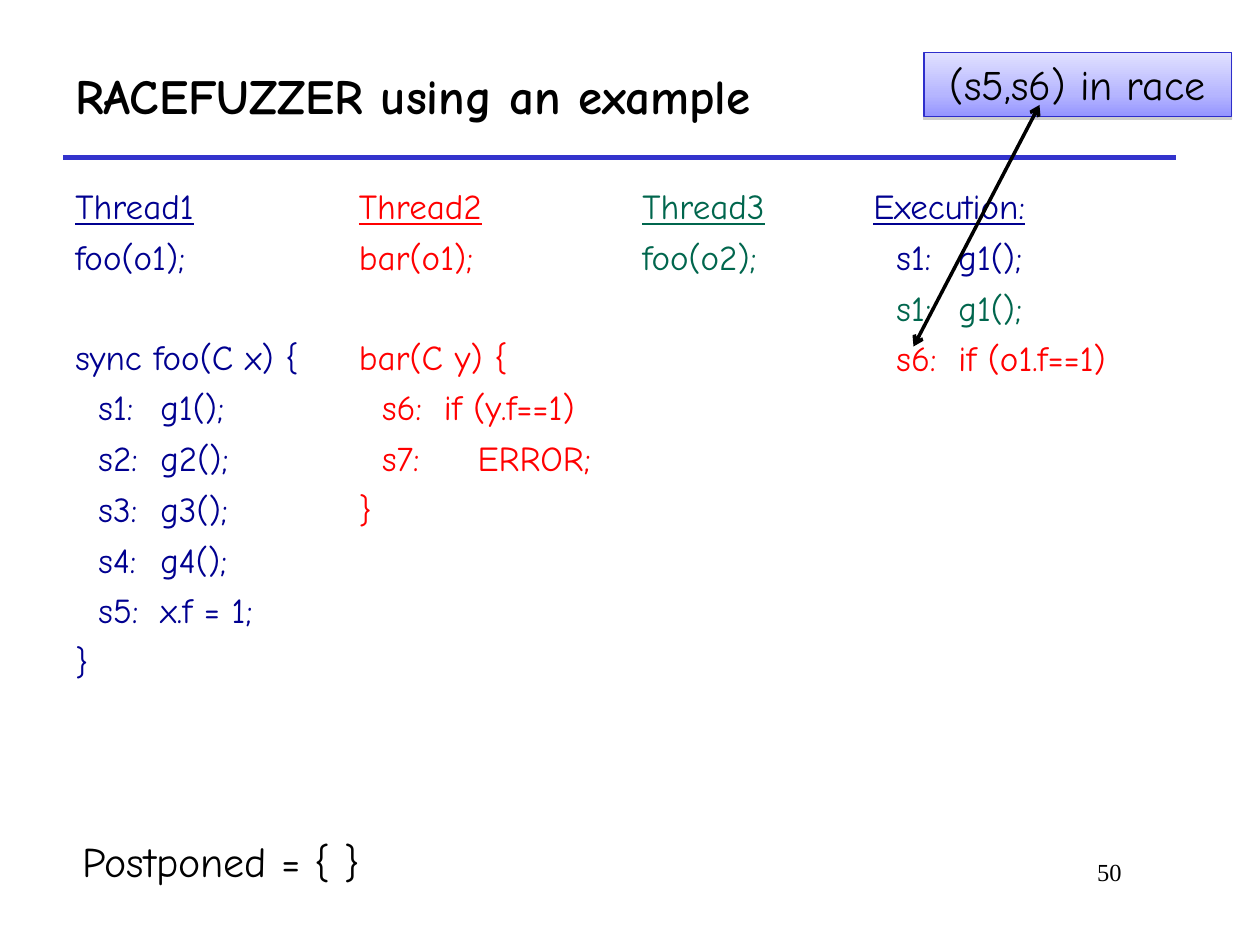
import copy
import pptx
import pptx.dml.color
import pptx.enum.shapes
import pptx.enum.text
import pptx.oxml.ns
import pptx.util
from lxml import etree

PX = 7620  # EMU per px, 120 px to the inch
HUES = {
    "black": "000000", "navy": "000090", "red": "FF0000", "green": "00664D",
    "rule": "3333CC", "edge": "2E2ECB", "shade": "808080",
    "pale": "E1E1FF", "mid": "B6B6FF", "deep": "9595FF",
}
SANS, SERIF = "Comic Neue", "Times New Roman"
ALIGN = pptx.enum.text.PP_ALIGN
ANCHOR = pptx.enum.text.MSO_ANCHOR
LABEL, CODE, NESTED = 22, 81, 113  # left edges inside a code column
GAP, LINE = 5, 28  # space before a line and line pitch, in points


def hue(name):
    return pptx.dml.color.RGBColor.from_string(HUES[name])


def emu(*sizes):
    return [pptx.util.Emu(size * PX) for size in sizes]


def add(parent, tag, **attrs):
    return etree.SubElement(parent, pptx.oxml.ns.qn(tag), attrs)


def style(para, size, color, face=SANS, bold=False, under=False):
    for run in para.runs:
        font = run.font
        font.size, font.name = pptx.util.Pt(size), face
        font.bold, font.underline = bold, under
        font.color.rgb = hue(color)


def label(slide, box, text, size, anchor=ANCHOR.TOP, align=ALIGN.LEFT, **look):
    shape = slide.shapes.add_textbox(*emu(*box))
    frame = shape.text_frame
    frame.word_wrap, frame.vertical_anchor = True, anchor
    frame.text = text
    frame.paragraphs[0].alignment = align
    style(frame.paragraphs[0], size, "black", **look)


def fit(shape, text):
    """Put one centred, unwrapped line in a shape that grows with it."""
    frame = shape.text_frame
    frame.word_wrap = False
    frame.auto_size = pptx.enum.text.MSO_AUTO_SIZE.SHAPE_TO_FIT_TEXT
    frame.vertical_anchor = ANCHOR.TOP
    frame.text = text
    para = frame.paragraphs[0]
    para.alignment, para.space_before = ALIGN.CENTER, pptx.util.Pt(GAP)
    style(para, 24, "black")


def line(slide, ends, color, width, arrows=False):
    link = slide.shapes.add_connector(
        pptx.enum.shapes.MSO_CONNECTOR.STRAIGHT, *emu(*ends))
    link.line.color.rgb = hue(color)
    link.line.width = pptx.util.Pt(width)
    if arrows:
        for tag in ("a:headEnd", "a:tailEnd"):
            add(link.line._get_or_add_ln(), tag, type="arrow")
    add(link._element.spPr, "a:effectLst")


def column(slide, box, head, color, rows):
    """Write a heading and code rows, each a (gap lines, text, colour)."""
    frame = slide.shapes.add_textbox(*emu(*box)).text_frame
    frame.word_wrap = True
    for num, (skip, text, tint) in enumerate([(0, head, color)] + rows):
        para = frame.add_paragraph() if num else frame.paragraphs[0]
        para.text = text
        para.space_before = pptx.util.Pt(GAP + skip * LINE)
        style(para, 20, tint, under=num == 0)
        if "\t" in text:
            left = NESTED if "ERROR" in text else CODE
            props = para._p.get_or_add_pPr()
            props.set("marL", str(left * PX))
            props.set("indent", str((LABEL - left) * PX))


def badge(slide, box, text):
    shape = slide.shapes.add_shape(
        pptx.enum.shapes.MSO_SHAPE.RECTANGLE, *emu(*box))
    shape.fill.gradient()
    shape.fill.gradient_angle = 270
    first = shape.fill.gradient_stops[0]._gs
    first.addnext(copy.deepcopy(first))
    ramp = (0, "pale"), (0.65, "mid"), (1, "deep")
    for stop, (place, color) in zip(shape.fill.gradient_stops, ramp):
        stop.position = place
        stop.color.rgb = hue(color)
    shape.line.color.rgb = hue("edge")
    shape.line.width = pptx.util.Pt(0.75)
    shape.shadow.inherit = False
    glow = add(shape._element.spPr.find(pptx.oxml.ns.qn("a:effectLst")),
               "a:outerShdw", blurRad="0", dist="20320", dir="5400000",
               rotWithShape="0")
    add(add(glow, "a:srgbClr", val=HUES["shade"]), "a:alpha", val="38000")
    fit(shape, text)


def threads(slide, top, high):
    foo = [(0, f"s{num}:\tg{num}();", "navy") for num in range(1, 5)]
    column(slide, (60, top, 290, high), "Thread1", "navy", [
        (0, "foo(o1);", "navy"), (1, "sync foo(C x) {", "navy"), *foo,
        (0, "s5:\tx.f = 1;", "navy"), (0, "}", "navy")])
    column(slide, (330, top, 380, high), "Thread2", "red", [
        (0, "bar(o1);", "red"), (1, "bar(C y) {", "red"),
        (0, "s6:\tif (y.f==1)", "red"), (0, "s7:\tERROR;", "red"),
        (0, "}", "red")])
    column(slide, (600, top, 220, high), "Thread3", "green", [
        (0, "foo(o2);", "green")])
    column(slide, (820, top, 290, high), "Execution:", "navy", [
        (0, "s1:\tg1();", "navy"), (0, "s1:\tg1();", "green"),
        (0, "s6:\tif (o1.f==1)", "red")])


def main():
    deck = pptx.Presentation()
    deck.slide_width, deck.slide_height = emu(1200, 900)
    slide = deck.slides.add_slide(deck.slide_layouts[6])
    line(slide, (60, 150, 1120, 150), "rule", 3)
    label(slide, (60, 40, 1060, 100), "RACEFUZZER using an example", 28,
          anchor=ANCHOR.MIDDLE, bold=True)
    threads(slide, 170, 620)
    label(slide, (830, 810, 250, 60), "50", 14, align=ALIGN.RIGHT, face=SERIF)
    badge(slide, (880, 50, 293, 61), "(s5,s6) in race")
    line(slide, (870, 330, 990, 100), "black", 2, arrows=True)
    fit(slide.shapes.add_textbox(*emu(60, 790, 302, 61)), "Postponed = { }")
    deck.save("out.pptx")


if __name__ == "__main__":
    main()
